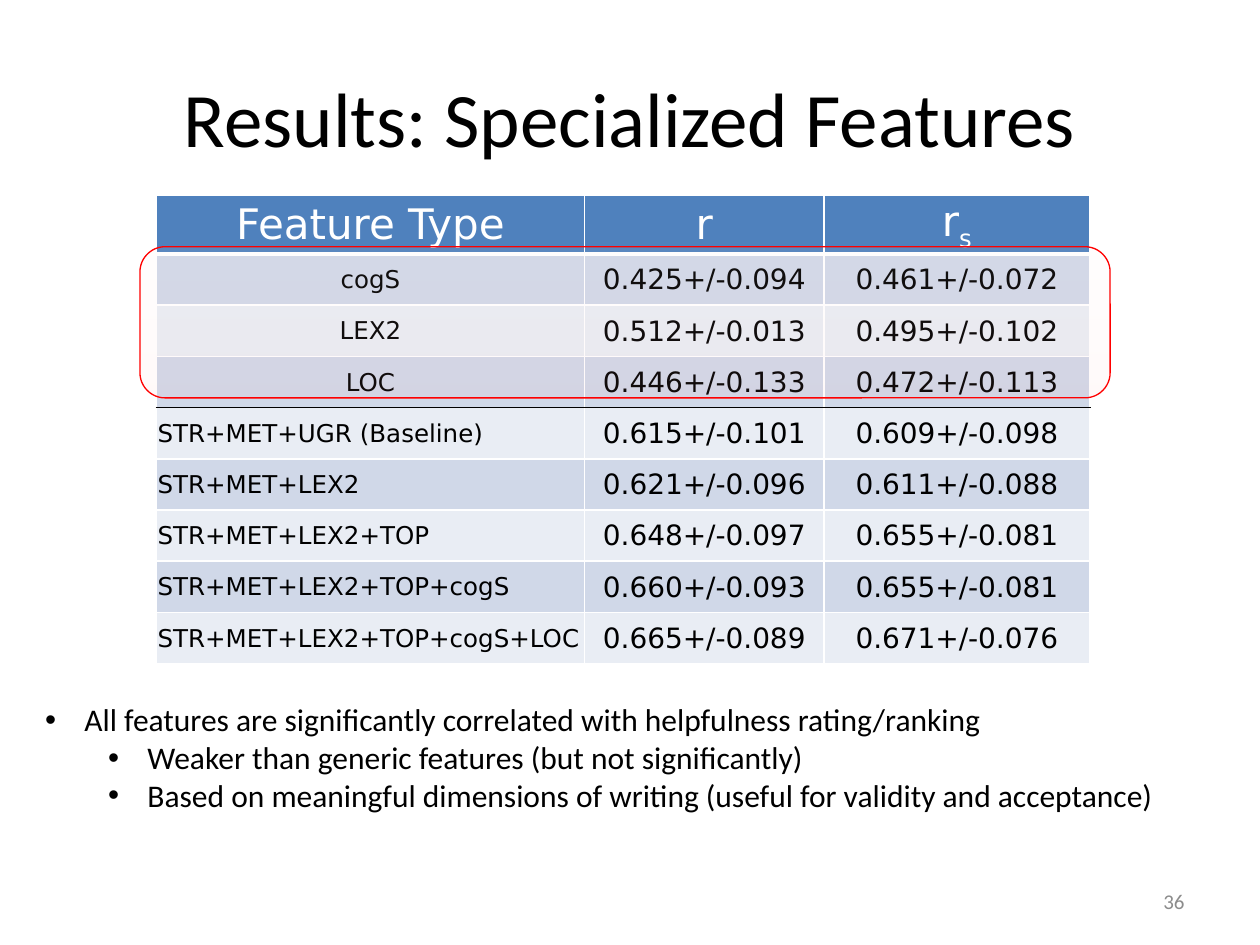
from lxml.etree import SubElement
from pptx import Presentation
from pptx.dml.color import RGBColor
from pptx.enum.shapes import MSO_SHAPE as SHAPE
from pptx.enum.text import MSO_ANCHOR as ANCHOR, PP_ALIGN as ALIGN
from pptx.oxml.ns import qn
from pptx.util import Pt

COLORS = {
    "text": "000000",
    "white": "FFFFFF",
    "header": "4F81BD",
    "band_dark": "D0D8E8",
    "band_light": "E9EDF4",
    "page": "8C8C8C",
    "highlight": "FF0000",
    "glow_start": "FFA6A5",
    "glow_mid": "FFC0BF",
    "glow_end": "FFE7E7",
}
BODY_FONT = "Calibri"
TABLE_FONT = "DejaVu Sans"

COLUMN_WIDTHS = [244.8, 136.8, 151.9]
ROW_HEIGHT = 29.28
LAST_SINGLE_ROW = 3
RESULTS = [
    ("Feature Type", "r", "r"),
    ("cogS", "0.425+/-0.094", "0.461+/-0.072"),
    ("LEX2", "0.512+/-0.013", "0.495+/-0.102"),
    ("LOC", "0.446+/-0.133", "0.472+/-0.113"),
    ("STR+MET+UGR (Baseline)", "0.615+/-0.101", "0.609+/-0.098"),
    ("STR+MET+LEX2", "0.621+/-0.096", "0.611+/-0.088"),
    ("STR+MET+LEX2+TOP", "0.648+/-0.097", "0.655+/-0.081"),
    ("STR+MET+LEX2+TOP+cogS", "0.660+/-0.093", "0.655+/-0.081"),
    ("STR+MET+LEX2+TOP+cogS+LOC", "0.665+/-0.089", "0.671+/-0.076"),
]
FINDINGS = [
    (0, "All features are significantly correlated with helpfulness rating/ranking"),
    (1, "Weaker than generic features (but not significantly)"),
    (1, "Based on meaningful dimensions of writing (useful for validity and acceptance)"),
]


def rgb(name):
    return RGBColor.from_string(COLORS[name])


def format_runs(p, size, color, font=BODY_FONT):
    for r in p.runs:
        r.font.size = Pt(size)
        r.font.name = font
        r.font.color.rgb = rgb(color)


def add_text(slide, box, text, size, color="text", align=ALIGN.LEFT, anchor=ANCHOR.MIDDLE):
    tf = slide.shapes.add_textbox(*map(Pt, box)).text_frame
    tf.word_wrap = True
    tf.vertical_anchor = anchor
    tf.text = text
    for p in tf.paragraphs:
        p.alignment = align
        format_runs(p, size, color)
    return tf


def add_findings(slide, box):
    text = "\n".join(line for _, line in FINDINGS)
    tf = add_text(slide, box, text, 18, anchor=ANCHOR.TOP)
    for p, (level, _) in zip(tf.paragraphs, FINDINGS):
        p.level = level
        pPr = p._p.get_or_add_pPr()
        pPr.set("marL", str(Pt(22.5 + 36 * level)))
        pPr.set("indent", str(Pt(-22.5)))
        SubElement(pPr, qn("a:buFont"), typeface="Arial")
        SubElement(pPr, qn("a:buChar"), char="•")


def set_border(cell, side, color, width):
    ln = SubElement(cell._tc.get_or_add_tcPr(), qn(f"a:ln{side}"), w=str(Pt(width)))
    SubElement(SubElement(ln, qn("a:solidFill")), qn("a:srgbClr"), val=COLORS[color])


def style_cell(cell, row, col):
    header = row == 0
    cell.margin_left = cell.margin_right = cell.margin_top = Pt(0.75)
    cell.margin_bottom = Pt(0)
    cell.vertical_anchor = ANCHOR.MIDDLE
    top = ("text", 1) if row == LAST_SINGLE_ROW + 1 else ("white", 3 if row == 1 else 1)
    bottom = ("text", 1) if row == LAST_SINGLE_ROW else ("white", 3 if header else 1)
    for side, border in zip("LRTB", [("white", 1), ("white", 1), top, bottom]):
        set_border(cell, side, *border)
    cell.fill.solid()
    cell.fill.fore_color.rgb = rgb("header" if header else "band_dark" if row % 2 else "band_light")
    p = cell.text_frame.paragraphs[0]
    combined = col == 0 and row > LAST_SINGLE_ROW
    p.alignment = ALIGN.LEFT if combined else ALIGN.CENTER
    size = 24 if header else 14 if col == 0 else 16
    format_runs(p, size, "white" if header else "text", TABLE_FONT)


def add_results(slide, left, top):
    table = slide.shapes.add_table(
        len(RESULTS), len(COLUMN_WIDTHS), Pt(left), Pt(top),
        Pt(sum(COLUMN_WIDTHS)), Pt(ROW_HEIGHT * len(RESULTS))).table
    for column, width in zip(table.columns, COLUMN_WIDTHS):
        column.width = Pt(width)
    for row, values in enumerate(RESULTS):
        table.rows[row].height = Pt(ROW_HEIGHT)
        for col, value in enumerate(values):
            cell = table.cell(row, col)
            cell.text = value
            if (row, col) == (0, 2):
                r = cell.text_frame.paragraphs[0].add_run()
                r.text = "s"
                r.font._element.set("baseline", "-25000")
            style_cell(cell, row, col)


def add_highlight(slide, box):
    sp = slide.shapes.add_shape(SHAPE.ROUNDED_RECTANGLE, *map(Pt, box))
    sp.shadow.inherit = False
    sp.line.color.rgb = rgb("highlight")
    sp.line.width = Pt(0.75)
    sp.fill.gradient()
    sp.fill.gradient_angle = 90
    stops = sp._element.spPr.find(f".//{qn('a:gsLst')}")
    for stop in list(stops):
        stops.remove(stop)
    for position, name in [(0, "glow_start"), (35, "glow_mid"), (100, "glow_end")]:
        stop = SubElement(stops, qn("a:gs"), pos=str(position * 1000))
        color = SubElement(stop, qn("a:srgbClr"), val=COLORS[name])
        SubElement(color, qn("a:alpha"), val="6000")


def main():
    prs = Presentation()
    prs.slide_width, prs.slide_height = Pt(720), Pt(540)
    slide = prs.slides.add_slide(prs.slide_layouts[6])
    add_text(slide, (36, 21.6, 648, 90), "Results: Specialized Features", 44, align=ALIGN.CENTER)
    add_results(slide, 89.3, 111.6)
    add_text(slide, (516, 500.5, 168, 28.75), "36", 12, "page", ALIGN.RIGHT)
    add_highlight(slide, (80, 141, 554.4, 86.4))
    add_findings(slide, (18.7, 396.7, 695.5, 72.7))
    prs.save("out.pptx")


if __name__ == "__main__":
    main()
